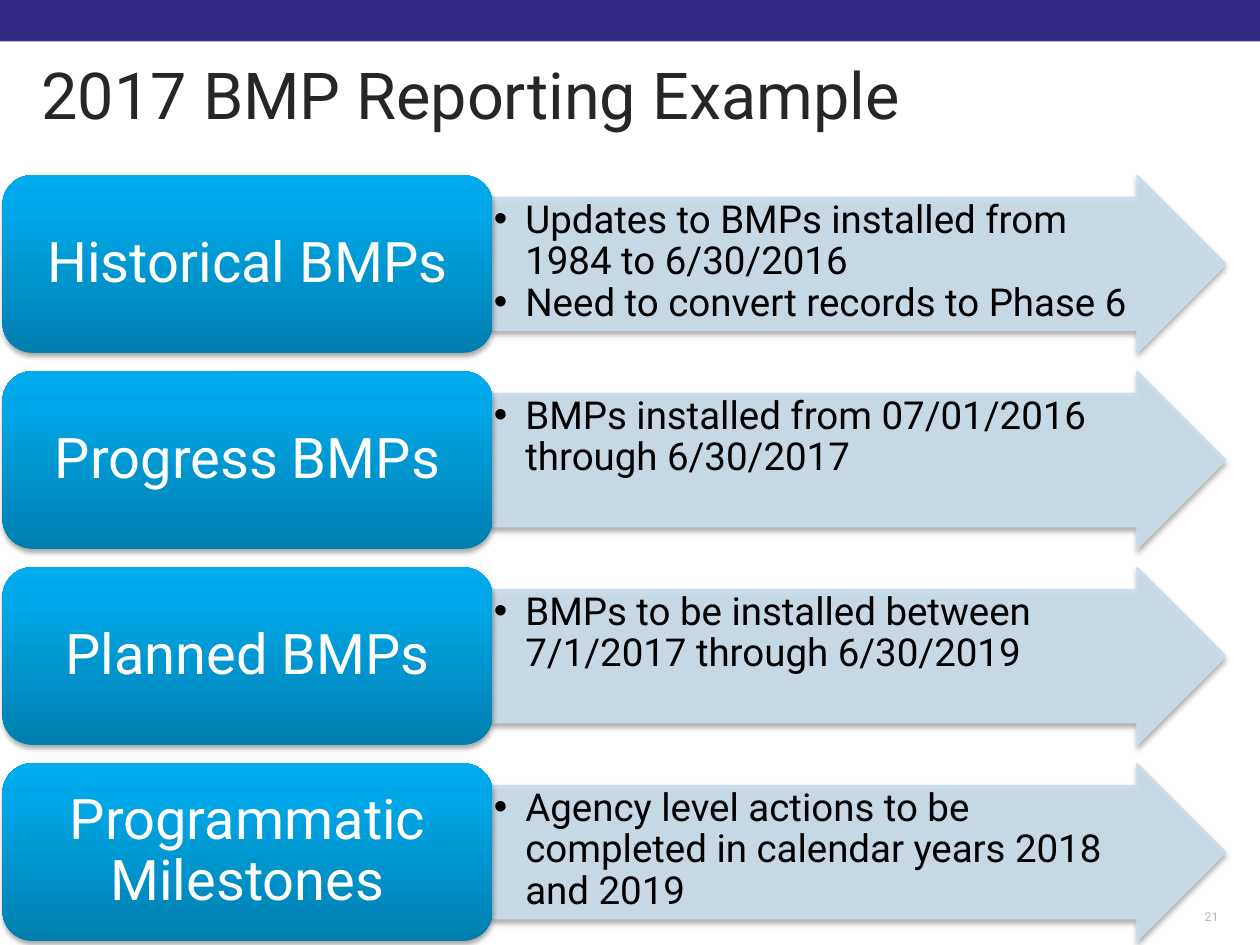
from copy import deepcopy
from dataclasses import dataclass

from lxml import etree
from pptx import Presentation
from pptx.dml.color import RGBColor
from pptx.enum.shapes import MSO_SHAPE
from pptx.enum.text import MSO_ANCHOR, MSO_AUTO_SIZE, PP_ALIGN
from pptx.oxml.ns import qn
from pptx.util import Inches, Pt

RECTANGLE = MSO_SHAPE.RECTANGLE
ROUNDED = MSO_SHAPE.ROUNDED_RECTANGLE
ARROW = MSO_SHAPE.RIGHT_ARROW
LEFT, CENTER, RIGHT = PP_ALIGN.LEFT, PP_ALIGN.CENTER, PP_ALIGN.RIGHT
TOP, MIDDLE = MSO_ANCHOR.TOP, MSO_ANCHOR.MIDDLE


@dataclass(frozen=True)
class Theme:
    font: str = "Roboto"
    title_size: float = 37
    label_size: float = 32
    bullet_size: float = 22
    number_size: float = 7
    bar: str = "332A86"
    title: str = "262626"
    label: str = "FFFFFF"
    bullet: str = "000000"
    number: str = "B7B7A9"
    arrow: str = "CADDEB"
    gradient: tuple = ((0, "007FAF"), (0.8, "00A7E8"), (1, "00ABEE"))


@dataclass(frozen=True)
class ReportingGroup:
    label: str
    bullets: tuple[str, ...]


THEME = Theme()
GROUPS = (
    ReportingGroup("Historical BMPs", (
        "Updates to BMPs installed from 1984 to 6/30/2016",
        "Need to convert records to Phase 6",
    )),
    ReportingGroup("Progress BMPs", ("BMPs installed from 07/01/2016 through 6/30/2017",)),
    ReportingGroup("Planned BMPs", ("BMPs to be installed between 7/1/2017 through 6/30/2019",)),
    ReportingGroup("Programmatic Milestones", (
        "Agency level actions to be completed in calendar years 2018 and 2019",
    )),
)
FIRST_TOP, ROW_PITCH, ROW_HEIGHT = 1.39, 1.556, 1.41
LABEL_LEFT, LABEL_WIDTH = 0.02, 3.89
ARROW_LEFT, ARROW_WIDTH = 3.9, 5.83


def write_text(shape, lines: tuple[str, ...], size: float, color: str, alignment,
               anchor, margins: tuple[float, float], line_spacing: float) -> None:
    """Fill the shape with one paragraph per line; margins are horizontal, vertical."""
    frame = shape.text_frame
    horizontal, vertical = map(Inches, margins)
    frame_format = {
        "word_wrap": True, "auto_size": MSO_AUTO_SIZE.NONE, "vertical_anchor": anchor,
        "margin_left": horizontal, "margin_right": horizontal,
        "margin_top": vertical, "margin_bottom": vertical,
    }
    for name, value in frame_format.items():
        setattr(frame, name, value)
    frame.text = "\n".join(lines)
    paragraph_format = {"alignment": alignment, "line_spacing": line_spacing,
                        "space_before": Pt(0), "space_after": Pt(0)}
    for paragraph in frame.paragraphs:
        for name, value in paragraph_format.items():
            setattr(paragraph, name, value)
        font = paragraph.runs[0].font
        font.name, font.size = THEME.font, Pt(size)
        font.color.rgb = RGBColor.from_string(color)


def add_bullets(shape) -> None:
    for paragraph in shape.text_frame.paragraphs:
        paragraph.level = 1
        properties = paragraph._p.get_or_add_pPr()
        properties.set("marL", str(Inches(0.25)))
        properties.set("indent", str(-Inches(0.25)))
        etree.SubElement(properties, qn("a:buFont"), typeface="Arial")
        etree.SubElement(properties, qn("a:buChar"), char="•")


def add_shadow(shape) -> None:
    shape.shadow.inherit = False
    effects = shape._element.spPr.find(qn("a:effectLst"))
    shadow = etree.SubElement(effects, qn("a:outerShdw"), blurRad=str(Pt(3.1)),
                              dist=str(Pt(1.8)), dir="5400000", rotWithShape="0")
    color = etree.SubElement(shadow, qn("a:srgbClr"), val="000000")
    etree.SubElement(color, qn("a:alpha"), val="35000")


def fill_gradient(shape) -> None:
    shape.fill.gradient()
    shape.fill.gradient_angle = 90
    stop_list = shape._element.spPr.find(".//" + qn("a:gsLst"))
    stop_list.append(deepcopy(stop_list[-1]))
    for stop, (position, color) in zip(shape.fill.gradient_stops, THEME.gradient):
        stop.position = position
        stop.color.rgb = RGBColor.from_string(color)


def add_arrow(slide, top: float, bullets: tuple[str, ...]) -> None:
    arrow = slide.shapes.add_shape(ARROW, Inches(ARROW_LEFT), Inches(top),
                                   Inches(ARROW_WIDTH), Inches(ROW_HEIGHT))
    arrow.adjustments[0], arrow.adjustments[1] = 0.75, 0.5
    arrow.line.width = Pt(0.75)
    for fill in (arrow.fill, arrow.line.fill):
        fill.solid()
        fill.fore_color.rgb = RGBColor.from_string(THEME.arrow)
    for color in arrow._element.spPr.iter(qn("a:srgbClr")):
        etree.SubElement(color, qn("a:alpha"), val="90000")
    add_shadow(arrow)
    write_text(arrow, bullets, THEME.bullet_size, THEME.bullet, LEFT, TOP, (0.02, 0.02), 0.9)
    add_bullets(arrow)


def add_label(slide, top: float, text: str) -> None:
    label = slide.shapes.add_shape(ROUNDED, Inches(LABEL_LEFT), Inches(top),
                                   Inches(LABEL_WIDTH), Inches(ROW_HEIGHT))
    fill_gradient(label)
    label.line.fill.background()
    add_shadow(label)
    write_text(label, (text,), THEME.label_size, THEME.label, CENTER, MIDDLE, (0.16, 0.08), 0.9)


def add_top_bar(slide, width: int) -> None:
    bar = slide.shapes.add_shape(RECTANGLE, 0, 0, width, Inches(0.33))
    bar.fill.solid()
    bar.fill.fore_color.rgb = RGBColor.from_string(THEME.bar)
    bar.line.fill.background()
    bar.shadow.inherit = False


def add_title(slide, text: str) -> None:
    title = slide.shapes.title
    position = {"left": 0.33, "top": 0.5, "width": 9.33, "height": 1}
    for name, value in position.items():
        setattr(title, name, Inches(value))
    write_text(title, (text,), THEME.title_size, THEME.title, LEFT, TOP, (0, 0.03), 0.85)


def add_slide_number(slide, number: str) -> None:
    box = slide.shapes.add_textbox(Inches(9.25), Inches(7.15), Inches(0.42), Inches(0.25))
    write_text(box, (number,), THEME.number_size, THEME.number, RIGHT, MIDDLE, (0, 0.03), 1.0)


def main() -> None:
    presentation = Presentation()
    presentation.slide_width, presentation.slide_height = Inches(10), Inches(7.5)
    slide = presentation.slides.add_slide(presentation.slide_layouts[5])
    add_top_bar(slide, presentation.slide_width)
    add_slide_number(slide, "21")
    for row, group in enumerate(GROUPS):
        top = FIRST_TOP + row * ROW_PITCH
        add_arrow(slide, top, group.bullets)
        add_label(slide, top, group.label)
    add_title(slide, "2017 BMP Reporting Example")
    presentation.save("out.pptx")


if __name__ == "__main__":
    main()
